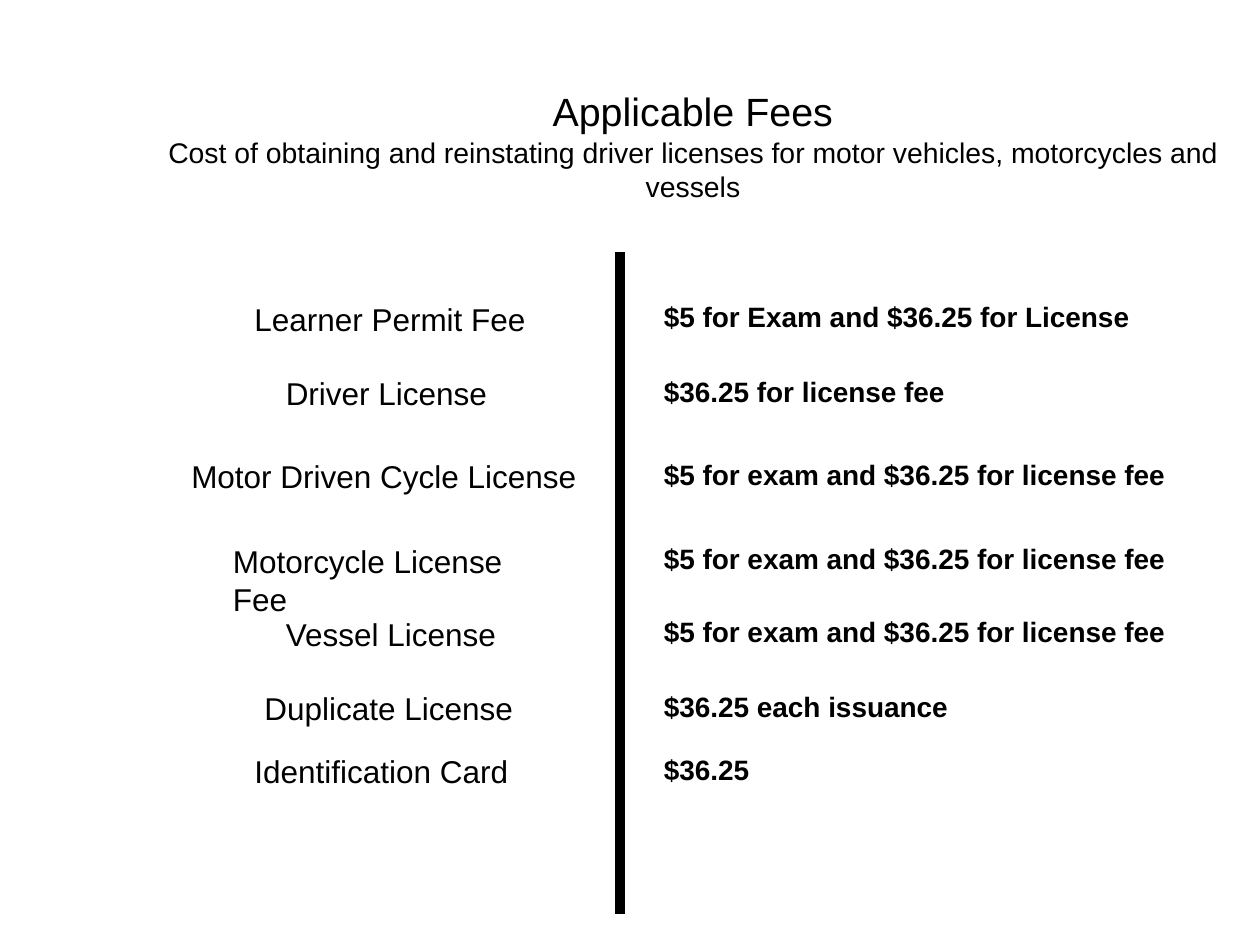
from pptx import Presentation
from pptx.dml.color import RGBColor
from pptx.enum.shapes import MSO_CONNECTOR
from pptx.enum.text import MSO_ANCHOR, PP_ALIGN
from pptx.oxml.ns import qn
from pptx.util import Inches, Pt
from lxml.etree import SubElement

HUES = {"ink": "000000", "page": "FFFFFF"}
FORMS = {
    "title": {"size": Pt(22.5), "bold": False},
    "lead": {"size": Pt(16.2), "bold": False},
    "label": {"size": Pt(18), "bold": False},
    "fee": {"size": Pt(16), "bold": True},
}


class Deck:
    """Holds the style and the current slide."""

    def __init__(self, wide, high):
        self.show = Presentation()
        self.show.slide_width = Inches(wide)
        self.show.slide_height = Inches(high)
        self.slide = self.show.slides.add_slide(self.show.slide_layouts[6])
        fill = self.slide.background.fill
        fill.solid()
        fill.fore_color.rgb = RGBColor.from_string(HUES["page"])

    def text(self, box, lines, align=PP_ALIGN.LEFT, anchor=MSO_ANCHOR.TOP):
        frame = self.slide.shapes.add_textbox(*map(Inches, box)).text_frame
        frame.word_wrap = True
        frame.vertical_anchor = anchor
        for i, (words, form) in enumerate(lines):
            para = frame.add_paragraph() if i else frame.paragraphs[0]
            para.alignment = align
            run = para.add_run()
            run.text = words
            run.font.color.rgb = RGBColor.from_string(HUES["ink"])
            for key, value in {"name": "Arial", **FORMS[form]}.items():
                setattr(run.font, key, value)

    def rule(self, x, top, end, width):
        line = self.slide.shapes.add_connector(
            MSO_CONNECTOR.STRAIGHT, *map(Inches, (x, top, x, end)))
        line.line.width = Pt(width)
        line.line.color.rgb = RGBColor.from_string(HUES["ink"])
        SubElement(line._element.spPr, qn("a:effectLst"))

    def save(self):
        self.show.save("out.pptx")


def main():
    exam = "$5 for exam and $36.25 for license fee"
    rows = [
        (2.33, 1.92, 2.5, "Learner Permit Fee", "$5 for Exam and $36.25 for License"),
        (2.92, 2.17, 2.5, "Driver License", "$36.25 for license fee"),
        (3.58, 1.42, 3.33, "Motor Driven Cycle License", exam),
        (4.25, 1.75, 2.74, "Motorcycle License Fee", exam),
        (4.83, 2.17, 2.5, "Vessel License", exam),
        (5.42, 2, 2.5, "Duplicate License", "$36.25 each issuance"),
        (5.92, 1.92, 2.5, "Identification Card", "$36.25"),
    ]
    deck = Deck(10, 7.5)
    deck.text((1, 0.33, 9, 1.33), [
        ("Applicable Fees", "title"),
        ("Cost of obtaining and reinstating driver licenses for motor "
         "vehicles, motorcycles and vessels", "lead"),
    ], PP_ALIGN.CENTER, MSO_ANCHOR.BOTTOM)
    deck.rule(4.92, 2, 7.25, 6)
    for top, left, width, label, fee in rows:
        high = 0.71 if label.startswith("Motorcycle") else 0.4
        deck.text((left, top, width, high), [(label, "label")])
        deck.text((5.17, top, 4.56, 0.37), [(fee, "fee")])
    deck.save()


if __name__ == "__main__":
    main()
